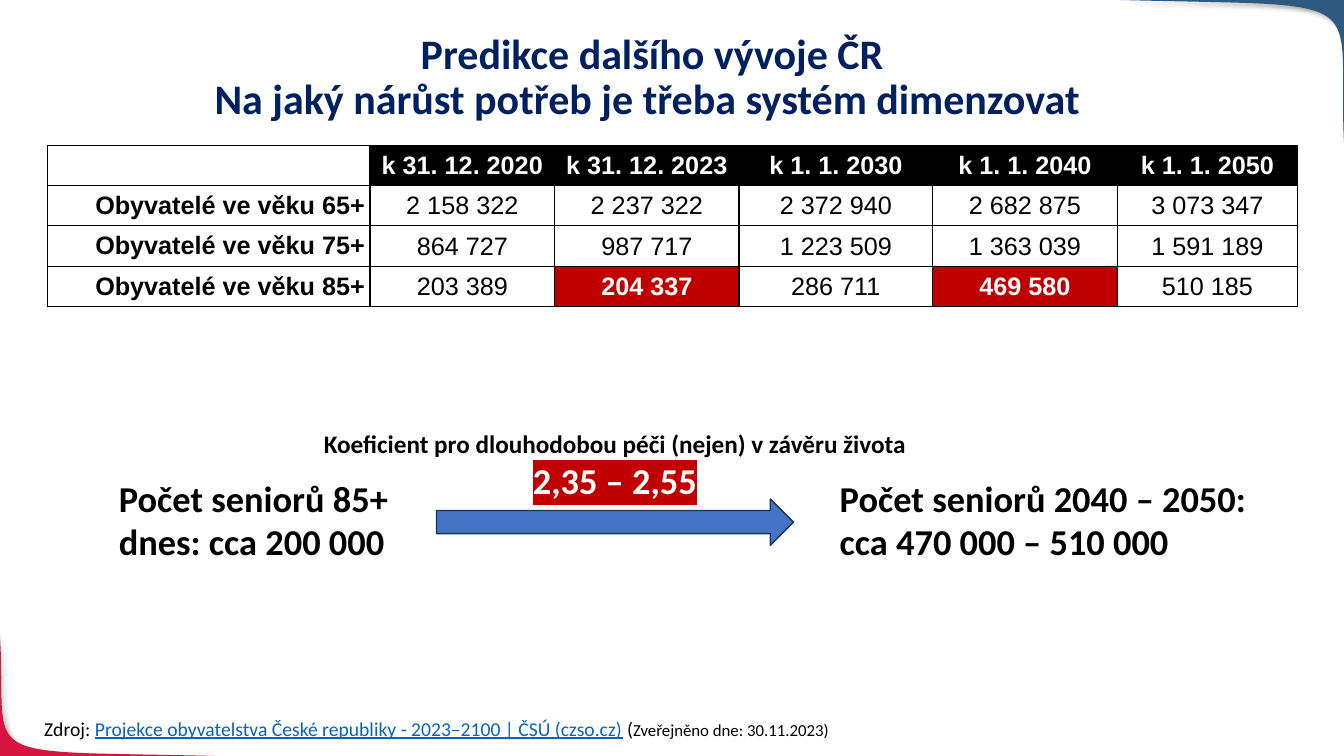
from lxml.etree import SubElement
from pptx import Presentation
from pptx.dml.color import RGBColor
from pptx.enum.shapes import MSO_SHAPE
from pptx.enum.text import MSO_ANCHOR, MSO_AUTO_SIZE, PP_ALIGN
from pptx.oxml import parse_xml
from pptx.oxml.ns import nsdecls, qn
from pptx.util import Inches, Pt

# Content
HUES = {"navy": "002060", "black": "000000", "white": "FFFFFF", "red": "C00000",
        "link": "0563C1", "arrow": "4472C4", "edge": "1E3256",
        "rose": "D71440", "steel": "2E5980"}
TITLE = ["Predikce dalšího vývoje ČR",
         "Na jaký nárůst potřeb je třeba systém dimenzovat "]
HEAD = ["", "k 31. 12. 2020", "k 31. 12. 2023", "k 1. 1. 2030",
        "k 1. 1. 2040", "k 1. 1. 2050"]
ROWS = [
    ["Obyvatelé ve věku 65+", "2 158 322", "2 237 322", "2 372 940", "2 682 875", "3 073 347"],
    ["Obyvatelé ve věku 75+", "864 727", "987 717", "1 223 509", "1 363 039", "1 591 189"],
    ["Obyvatelé ve věku 85+", "203 389", "204 337", "286 711", "469 580", "510 185"],
]
MARKED = {(3, 2), (3, 4)}
COLS = [3.2, 1.83, 1.83, 1.92, 1.83, 1.79]
ROW = 0.4
WIDE, HIGH = 13.33, 7.5

# Each run: text, size, colour, then optional style
BIG = {"bold": True}
NOTES = [
    ((1.08, 4.67, 3.99, 0.98), PP_ALIGN.LEFT,
     [[("Počet seniorů 85+", 26, "black", BIG)],
      [("dnes: cca 200 000", 26, "black", BIG)]]),
    ((8.23, 4.67, 4.75, 0.98), PP_ALIGN.LEFT,
     [[("Počet seniorů 2040 – 2050:", 26, "black", BIG)],
      [("cca 470 000 – 510 000", 26, "black", BIG)]]),
    ((2.86, 4.2, 6.48, 0.84), PP_ALIGN.CENTER,
     [[("Koeficient pro dlouhodobou péči (nejen) v závěru života", 18, "black", BIG)],
      [("2,35 – 2,55", 26, "white", {"bold": True, "glow": "red"})]]),
    ((0.34, 7.06, 12.52, 0.34), PP_ALIGN.LEFT,
     [[("Zdroj: ", 14, "black", {}),
       ("Projekce obyvatelstva České republiky - 2023–2100 | ČSÚ (czso.cz)",
        14, "link", {"line": True}),
       (" (", 14, "black", {}),
       ("Zveřejněno dne: 30.11.2023)", 12, "black", {})]]),
]
# Corner: colour, four curve points, slide corner
CORNERS = [
    ("rose", [(2.13, HIGH), (-0.34, 7.44), (0.08, 7.59), (0, 6.3)], (0, HIGH)),
    ("steel", [(11.11, 0), (13.7, 0.07), (13.26, -0.1), (WIDE, 1.42)], (WIDE, 0)),
]


def hue(name):
    return RGBColor.from_string(HUES[name])


def box(place):
    return [Inches(n) for n in place]


def add_run(para, text, size, tint, bold=False, line=False, glow=None, face="Calibri"):
    run = para.add_run()
    run.text = text
    font = run.font
    font.size, font.bold, font.underline = Pt(size), bold, line
    font.color.rgb = hue(tint)
    font.name = face
    if glow:
        mark = parse_xml(f'<a:highlight {nsdecls("a")}>'
                         f'<a:srgbClr val="{HUES[glow]}"/></a:highlight>')
        run.font._element.find(qn("a:solidFill")).addnext(mark)


def fill_text(frame, paras, align, gap=None):
    for i, runs in enumerate(paras):
        para = frame.add_paragraph() if i else frame.paragraphs[0]
        para.alignment = align
        if gap:
            para.line_spacing = gap
        for text, size, tint, style in runs:
            add_run(para, text, size, tint, **style)


def add_corner(slide, tint, curve, tip, steps=40):
    dots = []
    for i in range(steps + 1):
        t = i / steps
        parts = ((1 - t) ** 3, 3 * t * (1 - t) ** 2, 3 * t * t * (1 - t), t ** 3)
        dots.append(box(sum(w * p[k] for w, p in zip(parts, curve)) for k in (0, 1)))
    # Points are whole EMU, as the builder rounds its units
    pen = slide.shapes.build_freeform(*dots[0], scale=1.0)
    pen.add_line_segments(dots[1:] + [box(tip)], close=True)
    shape = pen.convert_to_shape()
    shape.fill.solid()
    shape.fill.fore_color.rgb = hue(tint)
    shape.line.fill.background()
    shape.shadow.inherit = False
    cast = SubElement(shape._element.spPr.find(qn("a:effectLst")), qn("a:outerShdw"),
                      blurRad=str(Pt(4)), dist=str(Pt(3)), dir="2700000",
                      algn="tl", rotWithShape="0")
    shade = SubElement(cast, qn("a:srgbClr"), val=HUES["black"])
    SubElement(shade, qn("a:alpha"), val="40000")


def add_edges(cell):
    props = cell._tc.get_or_add_tcPr()
    for i, side in enumerate("LRTB"):
        props.insert(i, parse_xml(
            f'<a:ln{side} {nsdecls("a")} w="{Pt(1)}"><a:solidFill>'
            f'<a:srgbClr val="{HUES["black"]}"/></a:solidFill></a:ln{side}>'))


def add_grid(slide):
    rows = [HEAD] + ROWS
    grid = slide.shapes.add_table(
        len(rows), len(COLS), *box((0.47, 1.44, sum(COLS), ROW * len(rows)))).table
    for col, width in zip(grid.columns, COLS):
        col.width = Inches(width)
    for r, row in enumerate(rows):
        grid.rows[r].height = Inches(ROW)
        for c, text in enumerate(row):
            cell = grid.cell(r, c)
            cell.vertical_anchor = MSO_ANCHOR.MIDDLE
            pad = 0.01 if c else 0.05
            cell.margin_left = cell.margin_right = cell.margin_top = Inches(pad)
            cell.margin_bottom = Inches(0 if c else pad)
            marked = (r, c) in MARKED
            back = "red" if marked else "black" if r == 0 and c else "white"
            cell.fill.solid()
            cell.fill.fore_color.rgb = hue(back)
            add_edges(cell)
            para = cell.text_frame.paragraphs[0]
            para.alignment = PP_ALIGN.CENTER if c else PP_ALIGN.RIGHT
            if text:
                add_run(para, text, 18, "black" if back == "white" else "white",
                        bold=r == 0 or c == 0 or marked, face="Arial")
            else:
                para.font.size = Pt(18)


def main():
    deck = Presentation()
    deck.slide_width, deck.slide_height = Inches(WIDE), Inches(HIGH)
    slide = deck.slides.add_slide(deck.slide_layouts[5])

    # Corners
    for corner in CORNERS:
        add_corner(slide, *corner)

    # Title
    title = slide.shapes.title
    title.left, title.top, title.width, title.height = box((0.72, 0.28, 11.5, 1.64))
    frame = title.text_frame
    frame.vertical_anchor = MSO_ANCHOR.TOP
    frame.auto_size = MSO_AUTO_SIZE.NONE
    fill_text(frame, [[(text, 30, "navy", BIG)] for text in TITLE], PP_ALIGN.CENTER, 0.9)

    # Arrow
    arrow = slide.shapes.add_shape(MSO_SHAPE.RIGHT_ARROW, *box((4.33, 4.95, 3.54, 0.46)))
    arrow.shadow.inherit = False
    arrow.fill.solid()
    arrow.fill.fore_color.rgb = hue("arrow")
    arrow.line.color.rgb = hue("edge")
    arrow.line.width = Pt(1)

    # Notes and source
    for place, align, paras in NOTES:
        frame = slide.shapes.add_textbox(*box(place)).text_frame
        frame.word_wrap = True
        fill_text(frame, paras, align)

    # Table
    add_grid(slide)
    deck.save("out.pptx")


if __name__ == "__main__":
    main()
